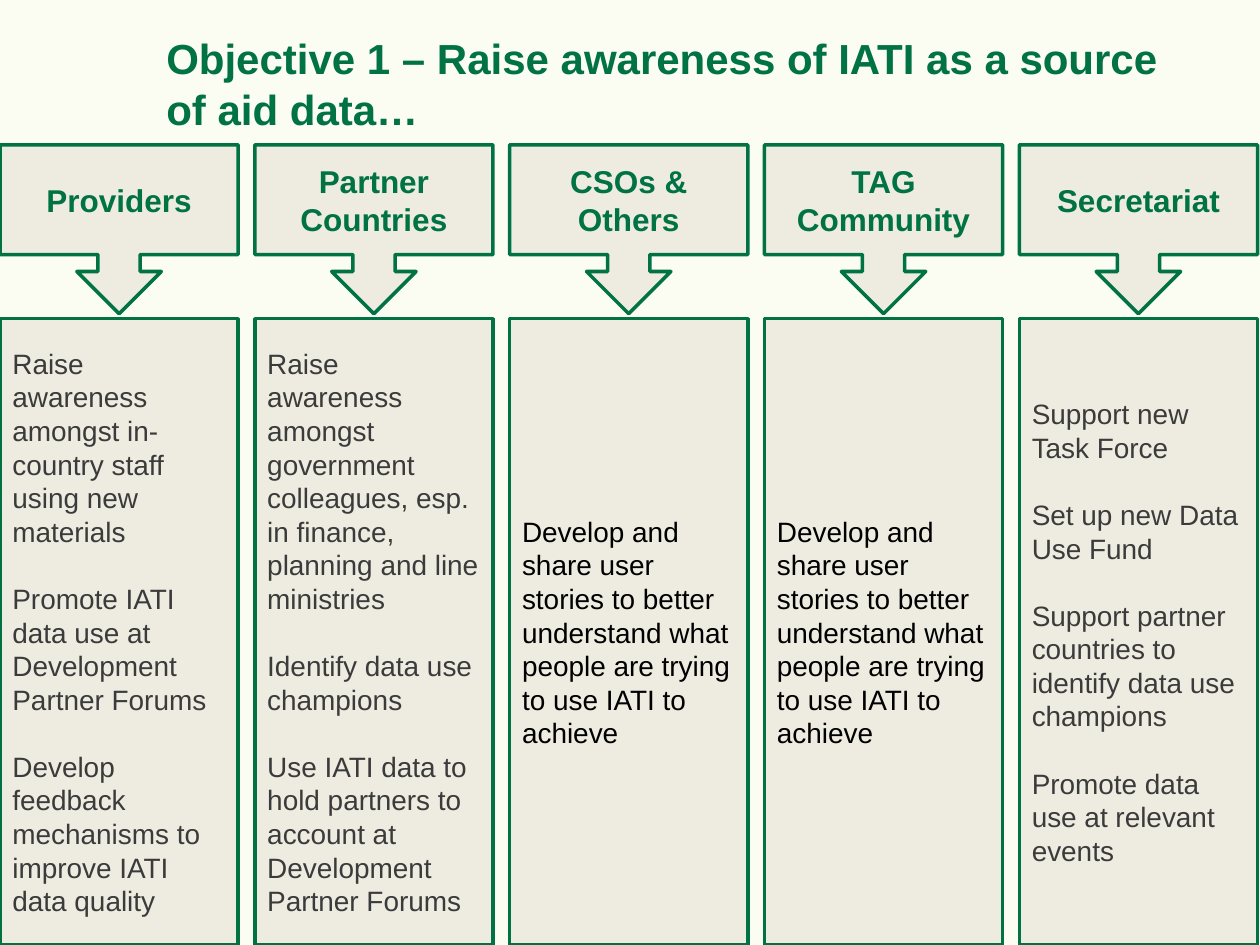
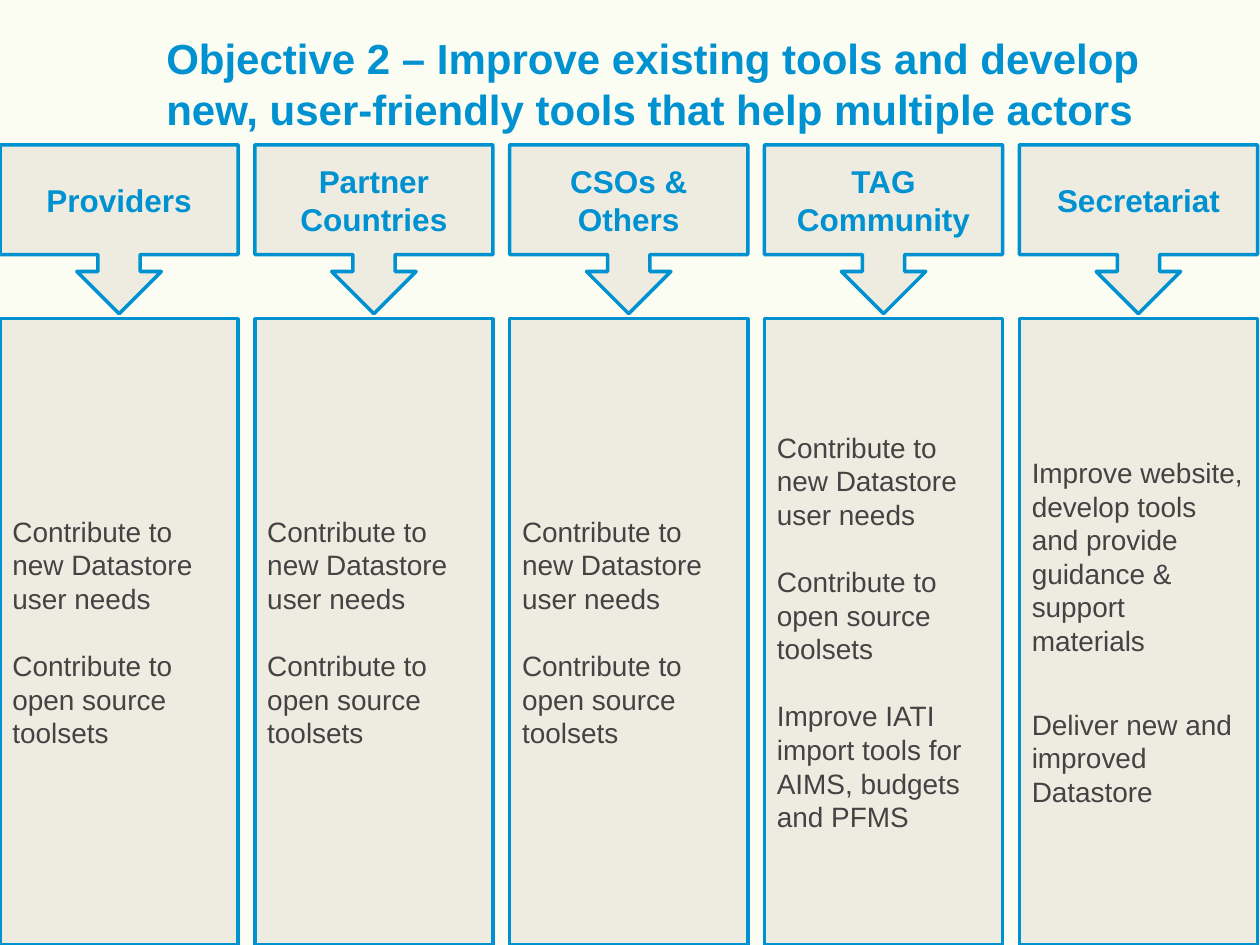
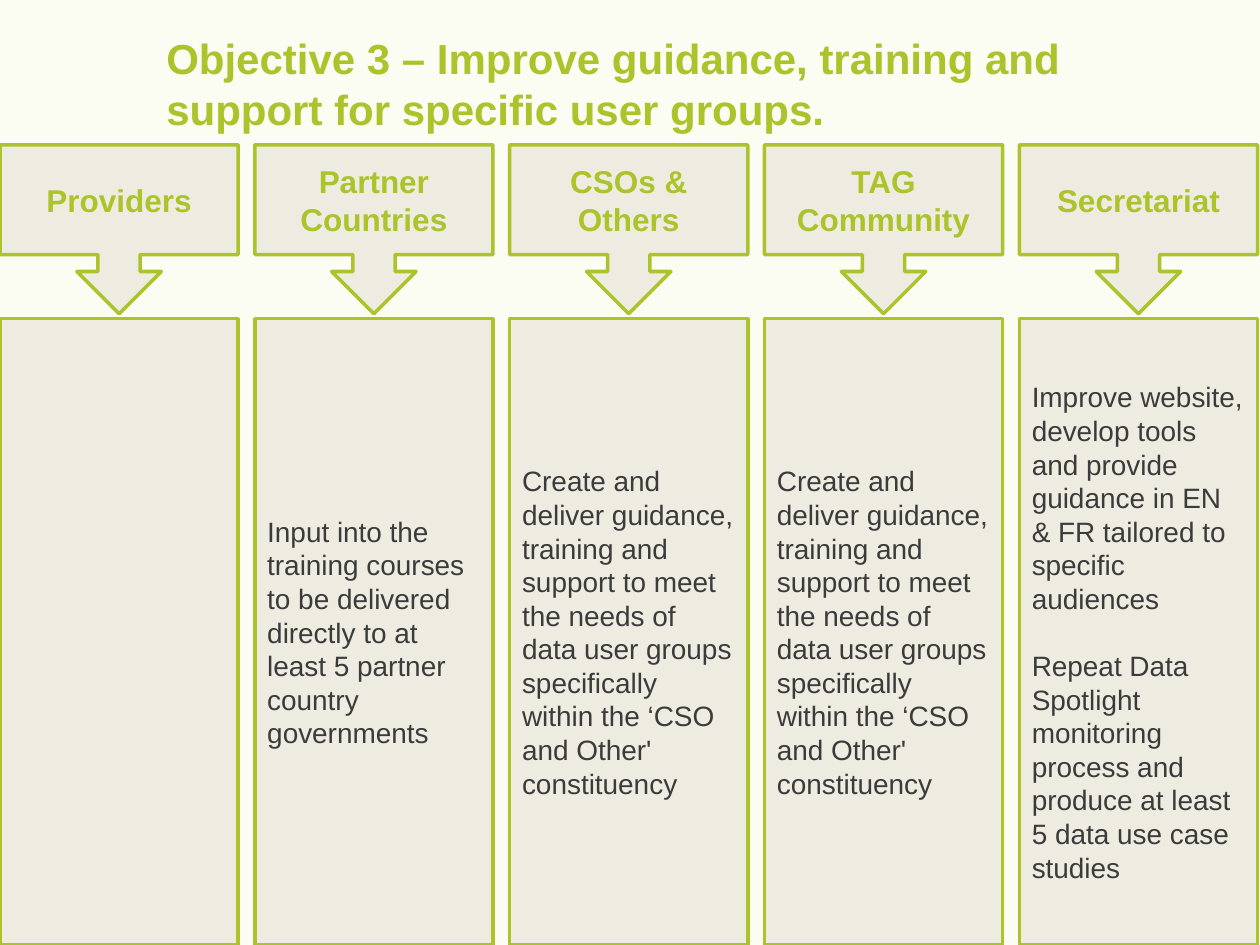
from dataclasses import dataclass

from pptx import Presentation
from pptx.dml.color import RGBColor
from pptx.enum.shapes import MSO_SHAPE as Shape
from pptx.enum.text import MSO_ANCHOR as Anchor, MSO_AUTO_SIZE as AutoSize, PP_ALIGN as Align
from pptx.util import Inches, Pt

FONT = "Arial"
PAPER, PANEL = "FBFCF2", "EEECE1"
CHARCOAL, GREY, BLACK = "3B3B3B", "434343", "000000"
GREEN, BLUE, LIME = "007244", "0092D0", "ACC32B"

TITLE_BOX = (1.22, 0.21, 8.4, 0.91)
COLUMN_WIDTH, COLUMN_PITCH = 1.89, 8.09 / 4
HEADER_TOP, HEADER_HEIGHT = 1.15, 1.34
ACTION_TOP, ACTION_HEIGHT = 2.53, 4.97
ACTION_GAP, WIDE_GAP = 19.2, 28.8

GROUPS = ("Providers", "Partner Countries", "CSOs & Others", "TAG Community", "Secretariat")


@dataclass
class Actions:
    """What one group is asked to do."""
    texts: tuple
    color: str = CHARCOAL
    gap: float = ACTION_GAP


STORIES = Actions((
    "Develop and share user stories to better understand what people are trying to use IATI to achieve",
), BLACK)
DATASTORE = (
    "Contribute to new Datastore user needs",
    "Contribute to open source toolsets",
)
CONTRIBUTE = Actions(DATASTORE, GREY)
GUIDANCE = Actions((
    "Create and deliver guidance, training and support to meet the needs of data user groups "
    "specifically within the ‘CSO and Other' constituency",
))

OBJECTIVES = (
    ("Objective 1 – Raise awareness of IATI as a source of aid data…", GREEN, (
        Actions((
            "Raise awareness amongst in-country staff using new materials",
            "Promote IATI data use at Development Partner Forums",
            "Develop feedback mechanisms to improve IATI data quality",
        )),
        Actions((
            "Raise awareness amongst government colleagues, esp. in finance, planning and line ministries",
            "Identify data use champions",
            "Use IATI data to hold partners to account at Development Partner Forums",
        )),
        STORIES,
        STORIES,
        Actions((
            "Support new Task Force",
            "Set up new Data Use Fund",
            "Support partner countries to identify data use champions",
            "Promote data use at relevant events",
        )),
    )),
    ("Objective 2 – Improve existing tools and develop new, user-friendly tools that help multiple actors", BLUE, (
        CONTRIBUTE,
        CONTRIBUTE,
        CONTRIBUTE,
        Actions(DATASTORE + ("Improve IATI import tools for AIMS, budgets and PFMS",), GREY),
        Actions((
            "Improve website, develop tools and provide guidance & support materials",
            "Deliver new and improved Datastore",
        ), GREY, WIDE_GAP),
    )),
    ("Objective 3 – Improve guidance, training and support for specific user groups.", LIME, (
        Actions(()),
        Actions((
            "Input into the training courses to be delivered directly to at least 5 partner country governments",
        )),
        GUIDANCE,
        GUIDANCE,
        Actions((
            "Improve website, develop tools and provide guidance in EN & FR tailored to specific audiences",
            "Repeat Data Spotlight monitoring process and produce at least 5 data use case studies",
        )),
    )),
)


def rgb(color):
    """Turn a hex string into a colour."""
    return RGBColor.from_string(color)


def write(frame, texts, size, color, bold=False, align=Align.LEFT, anchor=Anchor.MIDDLE, gap=0):
    """Write each text as a paragraph, with a gap between paragraphs."""
    frame.word_wrap = True
    frame.auto_size = AutoSize.NONE
    frame.vertical_anchor = anchor
    for index, text in enumerate(texts):
        para = frame.add_paragraph() if index else frame.paragraphs[0]
        para.alignment = align
        if index:
            para.space_before = Pt(gap)
        span = para.add_run()
        span.text = text
        span.font.name = FONT
        span.font.size = Pt(size)
        span.font.bold = bold
        span.font.color.rgb = rgb(color)


def add_panel(page, kind, box, accent):
    """Add a beige shape outlined in the accent colour."""
    panel = page.shapes.add_shape(kind, *map(Inches, box))
    panel.shadow.inherit = False
    panel.fill.solid()
    panel.fill.fore_color.rgb = rgb(PANEL)
    panel.line.color.rgb = rgb(accent)
    panel.line.width = Pt(2)
    return panel


def add_title(page, text, accent, box):
    """Place the objective in the title placeholder."""
    title = page.shapes.title
    title.left, title.top, title.width, title.height = map(Inches, box)
    write(title.text_frame, (text,), 24, accent, bold=True, anchor=Anchor.TOP)


def add_header(page, group, accent, box):
    """Add the callout that names a group and points at its actions."""
    header = add_panel(page, Shape.DOWN_ARROW_CALLOUT, box, accent)
    write(header.text_frame, (group,), 18, accent, bold=True, align=Align.CENTER)


def add_actions(page, actions, accent, box):
    """Add the panel that lists a group's actions."""
    panel = add_panel(page, Shape.RECTANGLE, box, accent)
    write(panel.text_frame, actions.texts, 16, actions.color, gap=actions.gap)


def add_objective(deck, text, accent, columns):
    """Add a slide with one column of actions per group."""
    page = deck.slides.add_slide(deck.slide_layouts.get_by_name("Title Only"))
    add_title(page, text, accent, TITLE_BOX)
    for index, (group, actions) in enumerate(zip(GROUPS, columns)):
        left = index * COLUMN_PITCH
        add_header(page, group, accent, (left, HEADER_TOP, COLUMN_WIDTH, HEADER_HEIGHT))
        add_actions(page, actions, accent, (left, ACTION_TOP, COLUMN_WIDTH, ACTION_HEIGHT))


def main():
    """Build the deck."""
    deck = Presentation()
    deck.slide_width, deck.slide_height = Inches(10), Inches(7.5)
    backdrop = deck.slide_master.background.fill
    backdrop.solid()
    backdrop.fore_color.rgb = rgb(PAPER)
    for text, accent, columns in OBJECTIVES:
        add_objective(deck, text, accent, columns)
    deck.save("out.pptx")


if __name__ == "__main__":
    main()
